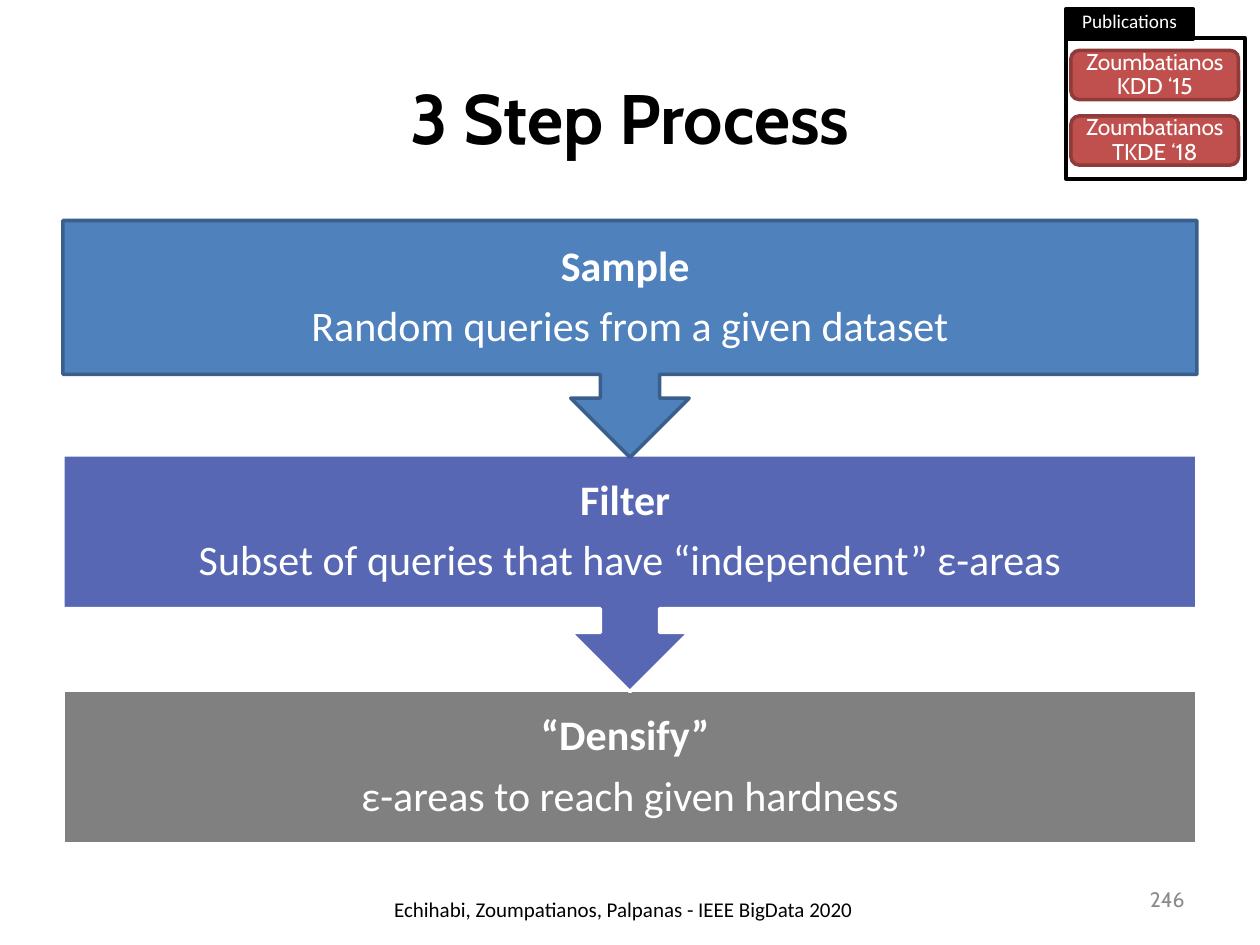
from pptx import Presentation
from pptx.dml.color import RGBColor
from pptx.enum.shapes import MSO_SHAPE
from pptx.enum.text import MSO_ANCHOR, PP_ALIGN
from pptx.util import Inches, Pt

COLORS = {
    "black": "000000", "white": "FFFFFF", "number": "8C8C8C",
    "blue": "4F81BD", "blue line": "3A5F8C", "indigo": "5767B4",
    "gray": "808080", "red": "C0504D", "red line": "8E3B39",
}
STEP_HEIGHT = 1.22
CALLOUT_HEIGHT = 1.88
# Drawn from the bottom up, so each arrow tip lies over the next step.
STEPS = [
    (MSO_SHAPE.RECTANGLE, 5.48, STEP_HEIGHT, "gray", "white",
     "“Densify” ", "ε-areas to reach given hardness"),
    (MSO_SHAPE.DOWN_ARROW_CALLOUT, 3.61, CALLOUT_HEIGHT, "indigo", "white",
     "Filter ", "Subset of queries that have “independent” ε-areas"),
    (MSO_SHAPE.DOWN_ARROW_CALLOUT, 1.75, CALLOUT_HEIGHT, "blue", "blue line",
     "Sample ", "Random queries from a given dataset"),
]
PUBLICATIONS = ["Zoumbatianos\vKDD ‘15", "Zoumbatianos\vTKDE ‘18"]


def color(name):
    return RGBColor.from_string(COLORS[name])


def set_frame(shape, anchor, inset=None):
    frame = shape.text_frame
    frame.word_wrap = True
    frame.vertical_anchor = anchor
    if inset is not None:
        for side in ("left", "right", "top", "bottom"):
            setattr(frame, f"margin_{side}", Inches(inset))


def format_paragraph(paragraph, text, size, font, color_name,
                     bold=False, **paragraph_format):
    paragraph.text = text
    for name, value in paragraph_format.items():
        setattr(paragraph, name, value)
    for run in paragraph.runs:
        run.font.color.rgb = color(color_name)
        for name, value in {"size": Pt(size), "name": font, "bold": bold}.items():
            setattr(run.font, name, value)


def add_text(slide, box, text, size, font, color_name,
             anchor=MSO_ANCHOR.MIDDLE, alignment=PP_ALIGN.LEFT, bold=False):
    shape = slide.shapes.add_textbox(*map(Inches, box))
    set_frame(shape, anchor)
    format_paragraph(shape.text_frame.paragraphs[0], text, size, font,
                     color_name, bold, alignment=alignment)


def add_filled_shape(slide, kind, box, fill, line):
    shape = slide.shapes.add_shape(kind, *map(Inches, box))
    shape.shadow.inherit = False
    shape.fill.solid()
    shape.fill.fore_color.rgb = color(fill)
    shape.line.color.rgb = color(line)
    shape.line.width = Pt(2)
    return shape


def add_step(slide, kind, top, height, fill, line, heading, detail):
    shape = add_filled_shape(slide, kind, (0.5, top, 9, height), fill, line)
    set_frame(shape, MSO_ANCHOR.MIDDLE, 0.19)
    frame = shape.text_frame
    for paragraph, text, bold in ((frame.paragraphs[0], heading, True),
                                  (frame.add_paragraph(), detail, False)):
        format_paragraph(paragraph, text, 24, "Calibri", "white", bold,
                         alignment=PP_ALIGN.CENTER, line_spacing=0.9,
                         space_after=Pt(8.4))


def add_publications(slide):
    add_filled_shape(slide, MSO_SHAPE.RECTANGLE, (8.46, 0.3, 1.42, 1.12),
                     "white", "black")
    tab = add_filled_shape(slide, MSO_SHAPE.RECTANGLE, (8.46, 0.07, 1.01, 0.24),
                           "black", "black")
    set_frame(tab, MSO_ANCHOR.BOTTOM)
    format_paragraph(tab.text_frame.paragraphs[0], "Publications", 11, "Calibri",
                     "white", alignment=PP_ALIGN.CENTER)
    for index, publication in enumerate(PUBLICATIONS):
        label = add_filled_shape(slide, MSO_SHAPE.ROUNDED_RECTANGLE,
                                 (8.5, 0.4 + 0.52 * index, 1.33, 0.39),
                                 "red", "red line")
        set_frame(label, MSO_ANCHOR.MIDDLE, 0)
        format_paragraph(label.text_frame.paragraphs[0], publication, 13, "Cabin",
                         "white", alignment=PP_ALIGN.CENTER, line_spacing=0.9)


def main():
    presentation = Presentation()
    presentation.slide_width = Inches(10)
    presentation.slide_height = Inches(7.5)
    slide = presentation.slides.add_slide(presentation.slide_layouts[6])

    add_text(slide, (0.5, 0.3, 9, 1.25), "3 Step Process", 40, "Cabin", "black",
             alignment=PP_ALIGN.CENTER, bold=True)
    for step in STEPS:
        add_step(slide, *step)
    add_text(slide, (7.17, 6.94, 2.33, 0.4), "246", 12, "Cabin", "number",
             alignment=PP_ALIGN.RIGHT)
    add_text(slide, (3.03, 7.07, 3.87, 0.4),
             "Echihabi, Zoumpatianos, Palpanas - IEEE BigData 2020",
             12, "Calibri", "black", anchor=MSO_ANCHOR.TOP)
    add_publications(slide)
    presentation.save("out.pptx")


if __name__ == "__main__":
    main()
